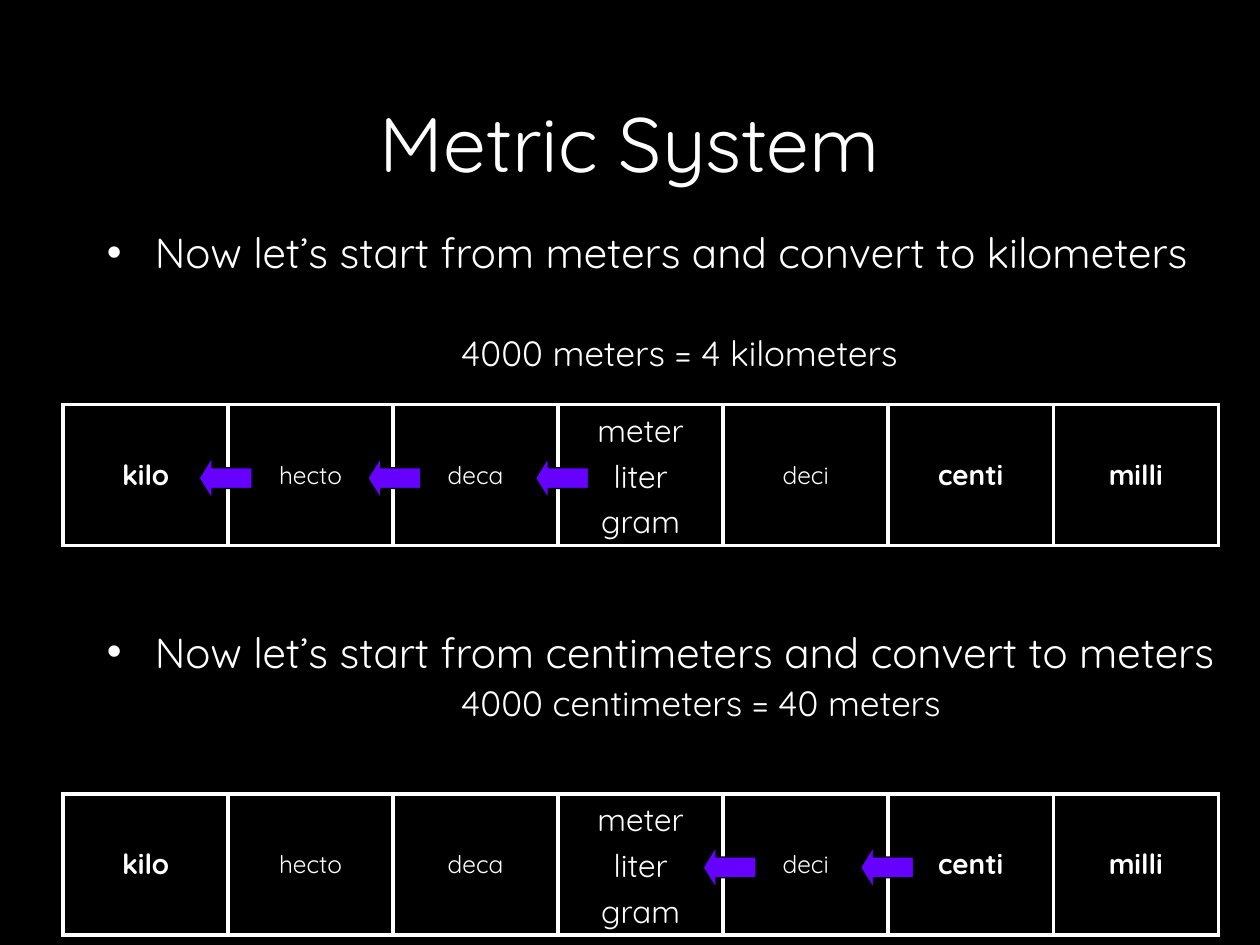
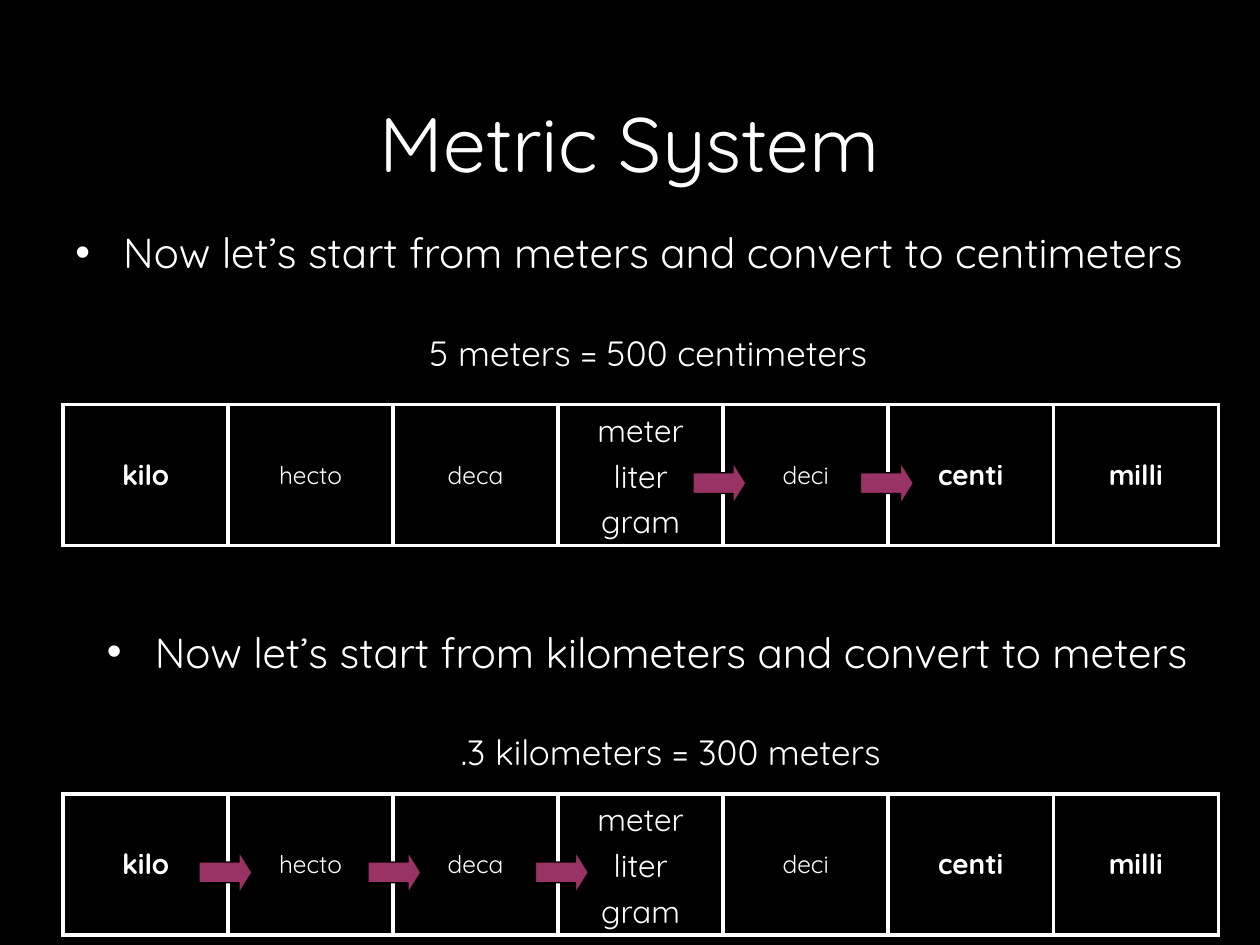
from lxml import etree
from pptx import Presentation
from pptx import util as u
from pptx.dml.color import RGBColor
from pptx.enum import shapes, text
from pptx.oxml.ns import qn

C = {"back": "000000", "ink": "FFFFFF", "up": "6600FF", "down": "993366"}
FONT = "Quicksand"
TITLE = "Metric System"

# (lines, size, bold) of each step on the prefix ladder
LADDER = [
    (["kilo"], 16, True),
    (["hecto"], 14, False),
    (["deca"], 14, False),
    (["meter", "liter", "gram"], 18, False),
    (["deci"], 14, False),
    (["centi"], 16, True),
    (["milli"], 16, True),
]

# Each slide has an upper and a lower example; "arrows" are left edges in inches
SLIDES = [
    {"arrow": shapes.MSO_SHAPE.LEFT_ARROW, "color": "up", "drop": 0.42, "examples": [
        {"task": "Now let’s start from meters and convert to kilometers",
         "answer": "4000 meters = 4 kilometers",
         "left": 0.75, "gap": 31, "arrows": [1.58, 2.92, 4.25]},
        {"task": "Now let’s start from centimeters and convert to meters",
         "answer": "4000 centimeters = 40 meters",
         "left": 0.75, "gap": 3, "arrows": [5.58, 6.83]},
    ]},
    {"arrow": shapes.MSO_SHAPE.RIGHT_ARROW, "color": "down", "drop": 0.46, "examples": [
        {"task": "Now let’s start from meters and convert to centimeters",
         "answer": "5 meters = 500 centimeters",
         "left": 0.5, "gap": 31, "arrows": [5.5, 6.83]},
        {"task": "Now let’s start from kilometers and convert to meters",
         "answer": ".3 kilometers = 300 meters",
         "left": 0.75, "gap": 31, "arrows": [1.58, 2.92, 4.25]},
    ]},
]

WIDTH, HEIGHT = 10, 7.5
# (text top, text height, ladder top) of the upper and lower example
BANDS = [(1.75, 1.75, 3.21), (4.92, 1.33, 6.3)]
LADDER_LEFT, LADDER_WIDTH, LADDER_HEIGHT = 0.5, 9.17, 1.12
ARROW_WIDTH, ARROW_HEIGHT = 0.42, 0.33
BULLET_INDENT, ANSWER_INDENT = 0.38, 2.81


def rgb(name):
    return RGBColor.from_string(C[name])


def write(p, words, size, bold=False, **layout):
    r = p.add_run()
    r.text = words
    for name, value in {"name": FONT, "size": u.Pt(size), "bold": bold}.items():
        setattr(r.font, name, value)
    r.font.color.rgb = rgb("ink")
    for name, value in layout.items():
        setattr(p, name, value)


def indent(p, left, first=0.0, bullet=None):
    """Set the paragraph's left margin, first-line offset and bullet."""
    pPr = p._p.get_or_add_pPr()
    pPr.set("marL", str(u.Inches(left)))
    pPr.set("indent", str(u.Inches(first)))
    if bullet:
        etree.SubElement(pPr, qn("a:buFont"), typeface="Arial")
        etree.SubElement(pPr, qn("a:buChar"), char=bullet)


def text_box(s, left, top, width, height):
    tf = s.shapes.add_textbox(*map(u.Inches, (left, top, width, height))).text_frame
    tf.word_wrap = True
    return tf


def add_title(s):
    tf = text_box(s, 0.75, 0.5, WIDTH - 1.5, 1.25)
    tf.vertical_anchor = text.MSO_ANCHOR.MIDDLE
    write(tf.paragraphs[0], TITLE, 44, alignment=text.PP_ALIGN.CENTER)


def add_example_text(s, example, top, height):
    tf = text_box(s, example["left"], top, WIDTH - example["left"], height)
    p = tf.paragraphs[0]
    write(p, example["task"], 24)
    indent(p, BULLET_INDENT, -BULLET_INDENT, "•")
    p = tf.add_paragraph()
    write(p, example["answer"], 20, space_before=u.Pt(example["gap"]))
    indent(p, ANSWER_INDENT)


def add_borders(cell):
    tcPr = cell._tc.get_or_add_tcPr()
    for side in ("lnL", "lnR", "lnT", "lnB"):
        ln = etree.SubElement(tcPr, qn(f"a:{side}"), w=str(u.Pt(2.25)))
        fill = etree.SubElement(ln, qn("a:solidFill"))
        etree.SubElement(fill, qn("a:srgbClr"), val=C["ink"])


def add_ladder(s, top):
    box = map(u.Inches, (LADDER_LEFT, top, LADDER_WIDTH, LADDER_HEIGHT))
    table = s.shapes.add_table(1, len(LADDER), *box).table
    table.first_row = table.horz_banding = False
    for cell, (lines, size, bold) in zip(table.rows[0].cells, LADDER):
        add_borders(cell)
        cell.fill.background()
        cell.vertical_anchor = text.MSO_ANCHOR.MIDDLE
        tf = cell.text_frame
        for i, line in enumerate(lines):
            p = tf.add_paragraph() if i else tf.paragraphs[0]
            write(p, line, size, bold, alignment=text.PP_ALIGN.CENTER,
                  space_before=u.Pt(0.2 * size))


def add_arrow(s, kind, color, left, top):
    sp = s.shapes.add_shape(kind, *map(u.Inches, (left, top, ARROW_WIDTH, ARROW_HEIGHT)))
    sp.adjustments[1] = 0.31
    sp.shadow.inherit = False
    sp.fill.solid()
    sp.fill.fore_color.rgb = rgb(color)
    sp.line.color.rgb = rgb("back")
    sp.line.width = u.Pt(0.75)


def main():
    prs = Presentation()
    prs.slide_width, prs.slide_height = u.Inches(WIDTH), u.Inches(HEIGHT)
    for content in SLIDES:
        s = prs.slides.add_slide(prs.slide_layouts[6])
        s.background.fill.solid()
        s.background.fill.fore_color.rgb = rgb("back")
        add_title(s)
        for example, (top, height, ladder_top) in zip(content["examples"], BANDS):
            add_example_text(s, example, top, height)
            add_ladder(s, ladder_top)
            for left in example["arrows"]:
                add_arrow(s, content["arrow"], content["color"], left,
                          ladder_top + content["drop"])
    prs.save("out.pptx")


if __name__ == "__main__":
    main()
